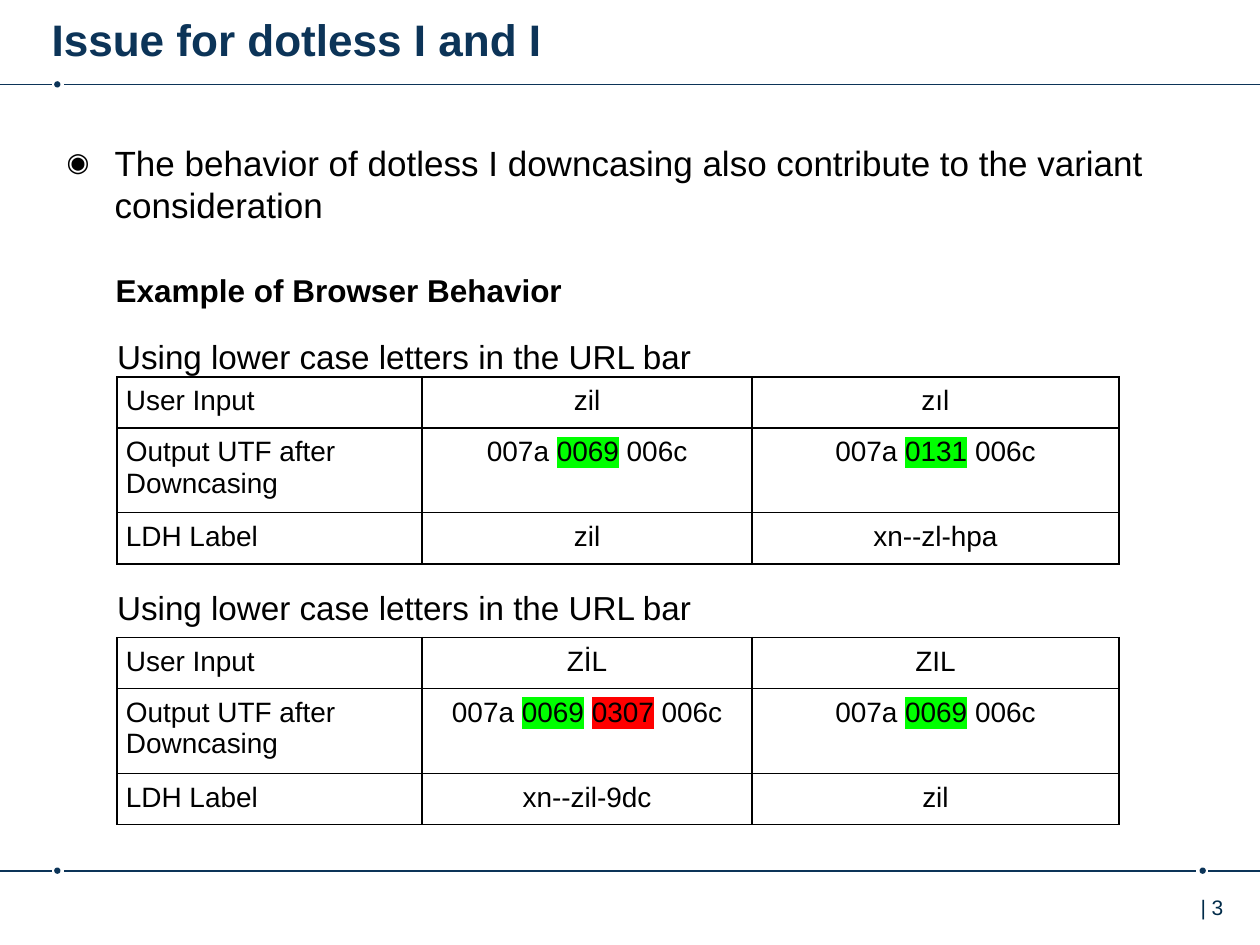
import pptx
import pptx.util
import pptx.dml.color
import pptx.enum.shapes
import pptx.enum.text
import pptx.oxml.ns
import lxml.etree
from dataclasses import dataclass

Inches = pptx.util.Inches
Pt = pptx.util.Pt
qn = pptx.oxml.ns.qn


@dataclass(frozen=True)
class Theme:
    font: str = "Arial"
    navy: str = "0C3458"
    number_color: str = "002B49"
    black: str = "000000"
    green: str = "00FF00"
    red: str = "FF0000"
    title_size: float = 25.2
    body_size: float = 20
    caption_size: float = 19
    heading_size: float = 18
    table_size: float = 16
    number_size: float = 12


theme = Theme()

# Content: a table cell is a list of (text, highlight) runs or a plain string
TITLE = "Issue for dotless I and I"
BULLET = "The behavior of dotless I downcasing also contribute to the variant consideration"
HEADING = "Example of Browser Behavior"
CAPTION = "Using lower case letters in the URL bar"
PAGE_NUMBER = "| 3"
ROW_LABELS = ["User Input", "Output UTF after Downcasing", "LDH Label"]
DOTTED_I = [("007a ", None), ("0069", theme.green), (" 006c", None)]
DOTLESS_I = [("007a ", None), ("0131", theme.green), (" 006c", None)]
COMBINING_DOT = [("007a ", None), ("0069", theme.green), (" ", None),
                 ("0307", theme.red), (" 006c", None)]
EXAMPLES = [  # caption top, table top, two value columns
    (2.67, 2.99, [["zil", DOTTED_I, "zil"], ["zıl", DOTLESS_I, "xn--zl-hpa"]]),
    (4.66, 5.06, [["ZİL", COMBINING_DOT, "xn--zil-9dc"], ["ZIL", DOTTED_I, "zil"]]),
]
COLUMN_WIDTHS = [2.42, 2.62, 2.91]
ROW_HEIGHTS = [0.405, 0.67, 0.405]
TABLE_LEFT = 0.93

# Rules: height, dot left edges, line segments
RULES = [
    (0.67, [0.43], [(0, 0.41), (0.51, 10)]),
    (6.91, [0.43, 9.52], [(0, 0.41), (0.51, 9.49), (9.59, 10)]),
]
DOT_SIZE = 0.05


def rgb(color):
    return pptx.dml.color.RGBColor.from_string(color)


def format_run(run, size, color, bold=False):
    run.font.name = theme.font
    run.font.size = Pt(size)
    run.font.bold = bold
    run.font.color.rgb = rgb(color)


def add_text(slide, box, text, size, color=theme.black, bold=False, insets=(0, 0)):
    shape = slide.shapes.add_textbox(*(Inches(length) for length in box))
    frame = shape.text_frame
    frame.word_wrap = True
    frame.margin_left = frame.margin_right = Inches(insets[0])
    frame.margin_top = frame.margin_bottom = Inches(insets[1])
    frame.text = text
    paragraph = frame.paragraphs[0]
    format_run(paragraph.runs[0], size, color, bold)
    return paragraph


def add_bullet(paragraph):
    properties = paragraph._p.get_or_add_pPr()
    properties.set("marL", str(Inches(0.38)))
    properties.set("indent", str(-Inches(0.38)))
    color = lxml.etree.SubElement(properties, qn("a:buClr"))
    lxml.etree.SubElement(color, qn("a:srgbClr"), val=theme.black)
    lxml.etree.SubElement(properties, qn("a:buSzPct"), val="75000")
    lxml.etree.SubElement(properties, qn("a:buFont"), typeface=theme.font)
    lxml.etree.SubElement(properties, qn("a:buChar"), char="◉")


def add_rule(slide, height, dots, segments):
    for left in dots:
        dot = slide.shapes.add_shape(
            pptx.enum.shapes.MSO_SHAPE.OVAL, Inches(left), Inches(height - DOT_SIZE / 2),
            Inches(DOT_SIZE), Inches(DOT_SIZE))
        dot.shadow.inherit = False
        dot.fill.solid()
        dot.fill.fore_color.rgb = rgb(theme.navy)
        dot.line.fill.background()
    for start, end in segments:
        line = slide.shapes.add_connector(
            pptx.enum.shapes.MSO_CONNECTOR.STRAIGHT,
            Inches(start), Inches(height), Inches(end), Inches(height))
        line.line.color.rgb = rgb(theme.navy)
        line.line.width = Pt(1)
        lxml.etree.SubElement(line._element.spPr, qn("a:effectLst"))


def highlight(run, color):
    element = lxml.etree.Element(qn("a:highlight"))
    lxml.etree.SubElement(element, qn("a:srgbClr"), val=color)
    run._r.rPr.find(qn("a:solidFill")).addnext(element)


def add_borders(cell):
    properties = cell._tc.get_or_add_tcPr()
    for index, side in enumerate(["a:lnL", "a:lnR", "a:lnT", "a:lnB"]):
        border = lxml.etree.Element(qn(side), w=str(Pt(1)))
        fill = lxml.etree.SubElement(border, qn("a:solidFill"))
        lxml.etree.SubElement(fill, qn("a:srgbClr"), val=theme.black)
        properties.insert(index, border)


def fill_cell(cell, content, centered):
    cell.fill.background()
    cell.margin_left = cell.margin_right = Inches(0.07)
    cell.margin_top = cell.margin_bottom = Inches(0.07)
    add_borders(cell)
    paragraph = cell.text_frame.paragraphs[0]
    if centered:
        paragraph.alignment = pptx.enum.text.PP_ALIGN.CENTER
    runs = [(content, None)] if isinstance(content, str) else content
    for text, color in runs:
        run = paragraph.add_run()
        run.text = text
        format_run(run, theme.table_size, theme.black)
        if color:
            highlight(run, color)


def add_example_table(slide, top, value_columns):
    columns = [ROW_LABELS] + value_columns
    table = slide.shapes.add_table(
        len(ROW_HEIGHTS), len(columns), Inches(TABLE_LEFT), Inches(top),
        Inches(sum(COLUMN_WIDTHS)), Inches(sum(ROW_HEIGHTS))).table
    table.first_row = table.horz_banding = False
    for row, height in zip(table.rows, ROW_HEIGHTS):
        row.height = Inches(height)
    for column_index, column in enumerate(columns):
        table.columns[column_index].width = Inches(COLUMN_WIDTHS[column_index])
        for row_index, content in enumerate(column):
            fill_cell(table.cell(row_index, column_index), content, column_index > 0)


def main():
    presentation = pptx.Presentation()
    presentation.slide_width, presentation.slide_height = Inches(10), Inches(7.5)
    slide = presentation.slides.add_slide(presentation.slide_layouts[6])

    # Frame: rules and page number
    for rule in RULES:
        add_rule(slide, *rule)
    add_text(slide, (9.43, 7.05, 0.57, 0.4), PAGE_NUMBER, theme.number_size,
             theme.number_color, insets=(0.1, 0.05))

    # Title, main point and heading
    add_text(slide, (0.41, 0.05, 8.76, 0.49), TITLE, theme.title_size,
             theme.navy, bold=True, insets=(0, 0.05))
    add_bullet(add_text(slide, (0.53, 1.12, 8.94, 1), BULLET, theme.body_size))
    add_text(slide, (0.82, 2.1, 3.9, 0.4), HEADING, theme.heading_size,
             bold=True, insets=(0.1, 0.05))

    # Captioned example tables
    for caption_top, table_top, value_columns in EXAMPLES:
        add_text(slide, (TABLE_LEFT, caption_top, 8.24, 0.4), CAPTION, theme.caption_size)
        add_example_table(slide, table_top, value_columns)

    presentation.save("out.pptx")


if __name__ == "__main__":
    main()
